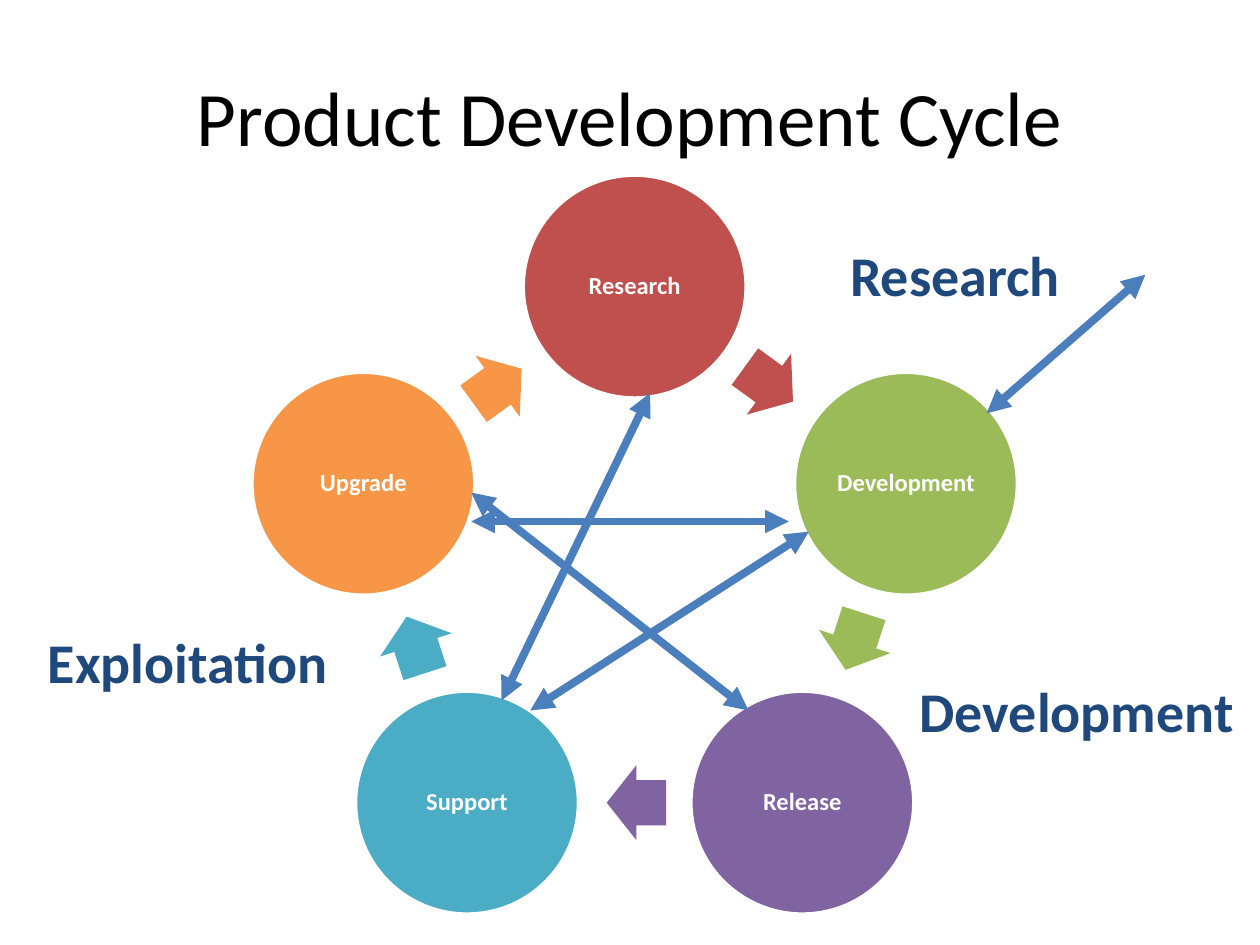
from math import cos, pi, radians, sin

from lxml import etree
from pptx import Presentation
from pptx.dml.color import RGBColor
from pptx.enum.shapes import MSO_CONNECTOR, MSO_SHAPE
from pptx.enum.text import MSO_ANCHOR, PP_ALIGN
from pptx.oxml.ns import qn
from pptx.util import Pt

ELLIPSE = MSO_SHAPE.OVAL
RIGHT_ARROW = MSO_SHAPE.RIGHT_ARROW
STRAIGHT = MSO_CONNECTOR.STRAIGHT
MIDDLE = MSO_ANCHOR.MIDDLE
CENTER = PP_ALIGN.CENTER
LEFT = PP_ALIGN.LEFT

FONT = "Calibri"
BLACK = RGBColor(0x00, 0x00, 0x00)
WHITE = RGBColor(0xFF, 0xFF, 0xFF)
NAVY = RGBColor(0x1F, 0x49, 0x7D)
BLUE = RGBColor(0x4B, 0x7E, 0xBC)

# Stages in clockwise order, starting at the top
STAGES = [
    ("Research", RGBColor(0xC0, 0x50, 0x4D)),
    ("Development", RGBColor(0x9B, 0xBB, 0x59)),
    ("Release", RGBColor(0x80, 0x64, 0xA2)),
    ("Support", RGBColor(0x4B, 0xAC, 0xC6)),
    ("Upgrade", RGBColor(0xF7, 0x96, 0x46)),
]
CYCLE_X, CYCLE_Y, CYCLE_RADIUS = 362.7, 326.8, 163
CIRCLE_SIZE = 127.4
ARROW_LENGTH, ARROW_WIDTH = 34, 43
ARROW_SETBACK = 1

# Phase name, left, top, width
PHASES = [
    ("Research", 478.8, 134, 135.4),
    ("Exploitation", 20.2, 355, 176.4),
    ("Development", 518.4, 383, 195.8),
]

# Start x, start y, end x, end y
LINKS = [
    (303, 406, 462.2, 303.8),
    (286.6, 400.3, 371.5, 224.6),
    (269.3, 281.5, 427.7, 406),
    (269.3, 298, 450.7, 298),
    (654.5, 157, 563.8, 236.2),
]


def add_text(text_frame, text, size, color, bold=False, align=CENTER):
    paragraph = text_frame.paragraphs[0]
    paragraph.alignment = align
    run = paragraph.add_run()
    run.text = text
    run.font.name = FONT
    run.font.size = Pt(size)
    run.font.bold = bold
    run.font.color.rgb = color
    return paragraph


def add_title(slide, text):
    title = slide.shapes.title
    title.left, title.top, title.width, title.height = Pt(36), Pt(21), Pt(648), Pt(90)
    title.text_frame.vertical_anchor = MIDDLE
    add_text(title.text_frame, text, 44, BLACK)


def add_centered_shape(slide, kind, x, y, width, height, color):
    shape = slide.shapes.add_shape(
        kind, Pt(x - width / 2), Pt(y - height / 2), Pt(width), Pt(height))
    shape.shadow.inherit = False
    shape.fill.solid()
    shape.fill.fore_color.rgb = color
    return shape


def add_stage(slide, name, color, angle):
    x = CYCLE_X + CYCLE_RADIUS * cos(radians(angle))
    y = CYCLE_Y + CYCLE_RADIUS * sin(radians(angle))
    circle = add_centered_shape(slide, ELLIPSE, x, y, CIRCLE_SIZE, CIRCLE_SIZE, color)
    circle.line.color.rgb = WHITE
    circle.line.width = Pt(2)
    frame = circle.text_frame
    frame.word_wrap = True
    frame.vertical_anchor = MIDDLE
    frame.margin_left = frame.margin_right = Pt(1.4)
    frame.margin_top = frame.margin_bottom = Pt(1.4)
    add_text(frame, name, 14, WHITE, bold=True).line_spacing = 0.9


def add_cycle_arrow(slide, color, angle):
    # The arrow sits halfway between two stages and points along the cycle
    radius = CYCLE_RADIUS * cos(pi / len(STAGES))
    heading = angle + 90
    x = (CYCLE_X + radius * cos(radians(angle))
         - ARROW_SETBACK * cos(radians(heading)))
    y = (CYCLE_Y + radius * sin(radians(angle))
         - ARROW_SETBACK * sin(radians(heading)))
    arrow = add_centered_shape(slide, RIGHT_ARROW, x, y, ARROW_LENGTH, ARROW_WIDTH, color)
    arrow.adjustments[0] = 0.6
    arrow.adjustments[1] = 0.5
    arrow.line.fill.background()
    arrow.rotation = heading % 360


def add_phase(slide, name, left, top, width):
    label = slide.shapes.add_textbox(Pt(left), Pt(top), Pt(width), Pt(46))
    label.text_frame.word_wrap = False
    add_text(label.text_frame, name, 32, NAVY, bold=True, align=LEFT)


def add_link(slide, start_x, start_y, end_x, end_y):
    link = slide.shapes.add_connector(
        STRAIGHT, Pt(start_x), Pt(start_y), Pt(end_x), Pt(end_y))
    link.line.color.rgb = BLUE
    link.line.width = Pt(4.5)
    line = link.line._get_or_add_ln()
    for end in ("a:headEnd", "a:tailEnd"):
        etree.SubElement(line, qn(end)).set("type", "triangle")
    etree.SubElement(link._element.spPr, qn("a:effectLst"))


def main():
    presentation = Presentation()
    presentation.slide_width = Pt(720)
    presentation.slide_height = Pt(540)
    slide = presentation.slides.add_slide(presentation.slide_layouts[5])

    add_title(slide, "Product Development Cycle")

    # Cycle of stages, each followed by its arrow
    step = 360 / len(STAGES)
    for index, (name, color) in enumerate(STAGES):
        angle = -90 + index * step
        add_stage(slide, name, color, angle)
        add_cycle_arrow(slide, color, angle + step / 2)

    # Phase names around the cycle
    for phase in PHASES:
        add_phase(slide, *phase)

    # Two-way links
    for link in LINKS:
        add_link(slide, *link)

    presentation.save("out.pptx")


if __name__ == "__main__":
    main()
